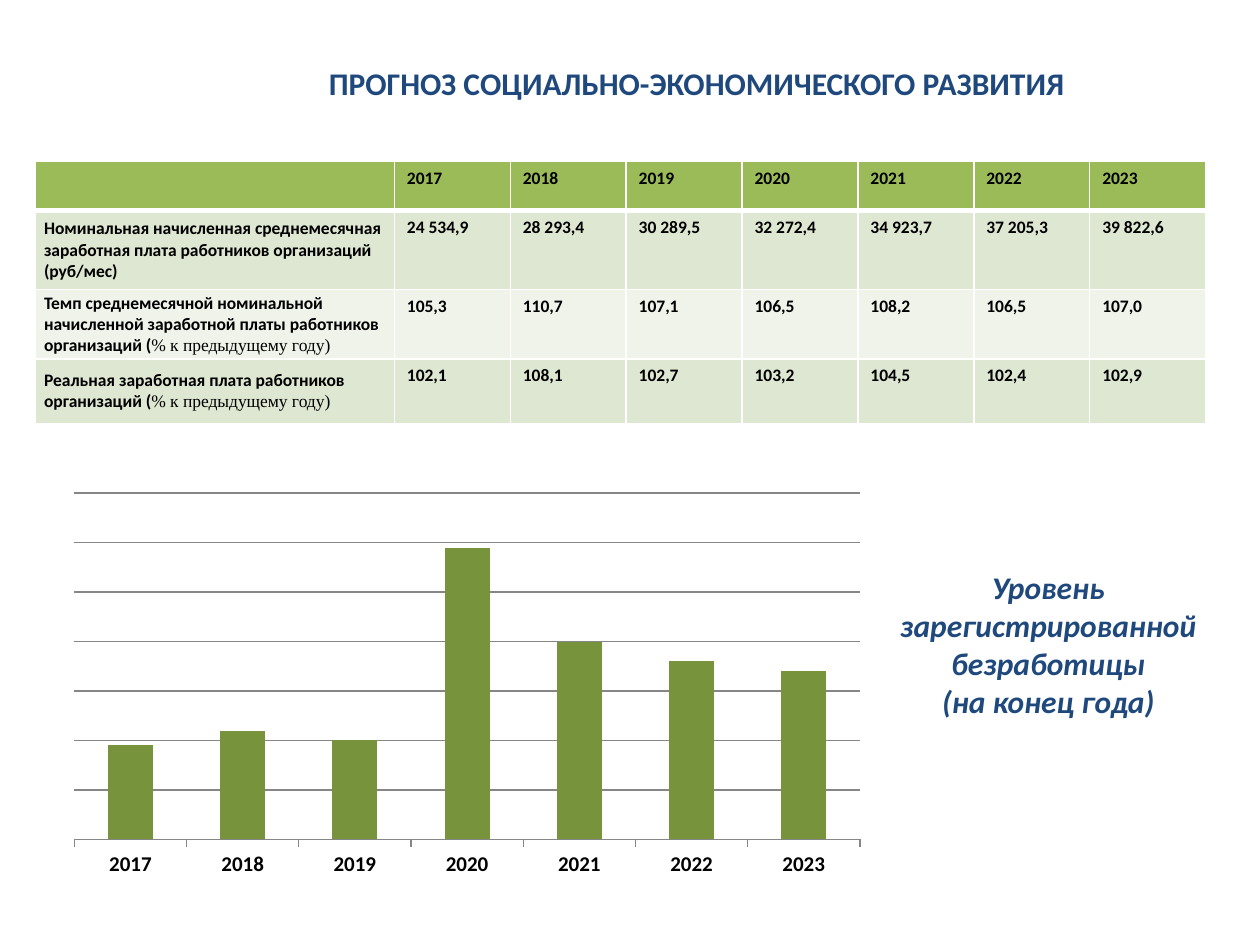
import pptx
import pptx.chart.data
import pptx.dml.color
import pptx.enum.chart
import pptx.enum.text
import pptx.oxml
import pptx.oxml.ns
import pptx.util
from pptx.util import Inches, Pt

# Content
TITLE = "ПРОГНОЗ СОЦИАЛЬНО-ЭКОНОМИЧЕСКОГО РАЗВИТИЯ"
CAPTION = ["Уровень", "зарегистрированной", "безработицы", "(на конец года)"]
YEARS = [str(year) for year in range(2017, 2024)]
SHARE_NOTE = "% к предыдущему году)"
# Each row: bold label, plain note, values by year
INDICATORS = [
    ("Номинальная начисленная среднемесячная заработная плата "
     "работников организаций (руб/мес)", "",
     ["24 534,9", "28 293,4", "30 289,5", "32 272,4", "34 923,7", "37 205,3", "39 822,6"]),
    ("Темп среднемесячной номинальной начисленной заработной платы "
     "работников организаций (", SHARE_NOTE,
     ["105,3", "110,7", "107,1", "106,5", "108,2", "106,5", "107,0"]),
    ("Реальная заработная плата работников организаций (", SHARE_NOTE,
     ["102,1", "108,1", "102,7", "103,2", "104,5", "102,4", "102,9"]),
]
# Bar heights in gridline steps
UNEMPLOYMENT = [1.9, 2.2, 2.0, 5.9, 4.0, 3.6, 3.4]

# Theme
THEME = {
    "font": "Calibri", "note_font": "Times New Roman",
    "heading": "1F497D", "text": "000000", "border": "FFFFFF",
    "header": "9BBB59", "bands": ["DEE7D1", "EFF3EA"],
    "bar": "77933C", "grid": "868686",
    "heading_size": 18, "table_size": 10, "axis_size": 12,
}
LABEL_WIDTH, YEAR_WIDTH = 2.85, 0.92
ROW_HEIGHTS = [0.39, 0.63, 0.55, 0.51]
PLOT = {"x": 0.003, "y": 0.074, "w": 0.939, "h": 0.833}


def rgb(name):
    return pptx.dml.color.RGBColor.from_string(THEME.get(name, name))


def style(font, size, color="text", bold=True, italic=False, face="font"):
    font.name, font.size = THEME[face], Pt(THEME[size])
    font.bold, font.italic = bold, italic
    font.color.rgb = rgb(color)


def set_borders(cell, top, bottom):
    widths = {"lnL": 1, "lnR": 1, "lnT": top, "lnB": bottom}
    for position, (edge, width) in enumerate(widths.items()):
        line = pptx.oxml.parse_xml(
            f'<a:{edge} {pptx.oxml.ns.nsdecls("a")} w="{Pt(width)}"><a:solidFill>'
            f'<a:srgbClr val="{THEME["border"]}"/></a:solidFill></a:{edge}>')
        cell._tc.get_or_add_tcPr().insert(position, line)


def add_title(slide):
    title = slide.shapes.title
    title.left, title.top = Inches(2.51), Inches(0.46)
    title.width, title.height = Inches(6.44), Inches(0.4)
    title.text_frame.text = TITLE
    title.text_frame.auto_size = pptx.enum.text.MSO_AUTO_SIZE.SHAPE_TO_FIT_TEXT
    heading = title.text_frame.paragraphs[0]
    heading.alignment = pptx.enum.text.PP_ALIGN.LEFT
    style(heading.font, "heading_size", "heading")


def add_wage_table(slide):
    rows = [("", "", YEARS)] + INDICATORS
    table = slide.shapes.add_table(
        len(rows), len(YEARS) + 1, Inches(0.28), Inches(1.28),
        Inches(LABEL_WIDTH + YEAR_WIDTH * len(YEARS)), Inches(sum(ROW_HEIGHTS))).table
    for index, column in enumerate(table.columns):
        column.width = Inches(YEAR_WIDTH if index else LABEL_WIDTH)
    for index, (label, note, values) in enumerate(rows):
        table.rows[index].height = Inches(ROW_HEIGHTS[index])
        fill = THEME["bands"][(index - 1) % 2] if index else "header"
        for cell, text in zip(table.rows[index].cells, [label] + values):
            cell.fill.solid()
            cell.fill.fore_color.rgb = rgb(fill)
            set_borders(cell, 3 if index == 1 else 1, 1 if index else 3)
            cell.text = text
            style(cell.text_frame.paragraphs[0].font, "table_size")
        if index:
            label_cell = table.cell(index, 0)
            label_cell.vertical_anchor = pptx.enum.text.MSO_ANCHOR.MIDDLE
            label_cell.margin_left = label_cell.margin_right = Inches(0.07)
            label_cell.margin_top = label_cell.margin_bottom = 0
            if note:
                note_run = label_cell.text_frame.paragraphs[0].add_run()
                note_run.text = note
                style(note_run.font, "table_size", bold=False, face="note_font")


def add_caption(slide):
    frame = slide.shapes.add_textbox(
        Inches(7), Inches(4.46), Inches(2.64), Inches(1.31)).text_frame
    frame.word_wrap = False
    frame.auto_size = pptx.enum.text.MSO_AUTO_SIZE.SHAPE_TO_FIT_TEXT
    frame.text = "\n".join(CAPTION)
    for line in frame.paragraphs:
        line.alignment = pptx.enum.text.PP_ALIGN.CENTER
        style(line.font, "heading_size", "heading", italic=True)


def add_unemployment_chart(slide):
    data = pptx.chart.data.CategoryChartData(number_format="0.0")
    data.categories = YEARS
    data.add_series(" ".join(CAPTION[:3]), UNEMPLOYMENT)
    chart = slide.shapes.add_chart(
        pptx.enum.chart.XL_CHART_TYPE.COLUMN_CLUSTERED,
        Inches(0.57), Inches(3.67), Inches(6.64), Inches(3.3), data).chart
    chart.has_legend = chart.has_title = False
    style(chart.font, "table_size", bold=False)

    # Bars
    plot = chart.plots[0]
    plot.gap_width, plot.vary_by_categories = 150, False
    bars = plot.series[0].format.fill
    bars.solid()
    bars.fore_color.rgb = rgb("bar")

    # Axes
    years, level = chart.category_axis, chart.value_axis
    years.major_tick_mark = pptx.enum.chart.XL_TICK_MARK.OUTSIDE
    style(years.tick_labels.font, "axis_size")
    level.visible, level.has_major_gridlines = False, True
    level.minimum_scale, level.maximum_scale, level.major_unit = 0, 7, 1
    for line in (years.format.line, level.major_gridlines.format.line):
        line.color.rgb = rgb("grid")
        line.width = Pt(0.75)

    # Fixed inner plot area
    plot_area = chart._chartSpace.chart.plotArea
    for old in plot_area.findall(pptx.oxml.ns.qn("c:layout")):
        plot_area.remove(old)
    modes = "".join(f'<c:{axis}Mode val="edge"/>' for axis in "xy")
    sizes = "".join(f'<c:{key} val="{value}"/>' for key, value in PLOT.items())
    plot_area.insert(0, pptx.oxml.parse_xml(
        f'<c:layout {pptx.oxml.ns.nsdecls("c")}><c:manualLayout>'
        f'<c:layoutTarget val="inner"/>{modes}{sizes}</c:manualLayout></c:layout>'))


def main():
    deck = pptx.Presentation()
    deck.slide_width, deck.slide_height = Inches(10), Inches(7.5)
    slide = deck.slides.add_slide(deck.slide_layouts.get_by_name("Title Only"))
    add_title(slide)
    add_wage_table(slide)
    add_caption(slide)
    add_unemployment_chart(slide)
    deck.save("out.pptx")


if __name__ == "__main__":
    main()
